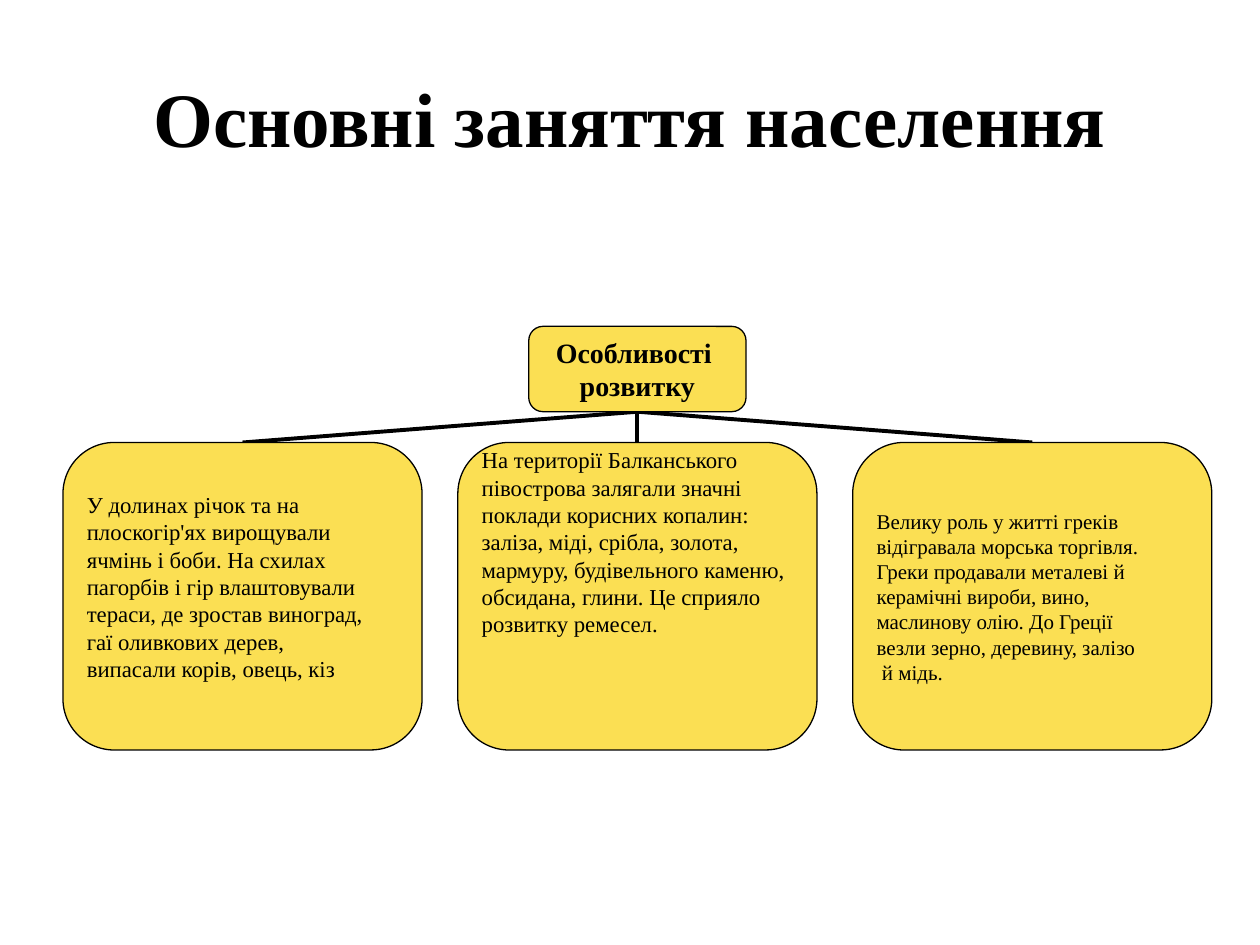
from dataclasses import dataclass

from lxml.etree import SubElement
from pptx import Presentation
from pptx.dml.color import RGBColor
from pptx.enum.shapes import MSO_CONNECTOR, MSO_SHAPE
from pptx.enum.text import MSO_ANCHOR, PP_ALIGN
from pptx.oxml.ns import qn
from pptx.util import Cm, Pt


@dataclass(frozen=True)
class Theme:
    font: str = "Times New Roman"
    ink: RGBColor = RGBColor(0x00, 0x00, 0x00)
    yellow: RGBColor = RGBColor(0xFB, 0xDF, 0x53)
    title: int = 44
    heading: int = 16
    body: int = 13
    small: int = 12


theme = Theme()


def write_lines(frame, lines, size, bold=False, align=PP_ALIGN.LEFT):
    frame.word_wrap = True
    frame.vertical_anchor = MSO_ANCHOR.MIDDLE
    for index, line in enumerate(lines):
        para = frame.paragraphs[0] if index == 0 else frame.add_paragraph()
        para.text = line
        para.alignment = align
        para.font.name = theme.font
        para.font.size = Pt(size)
        para.font.bold = bold
        para.font.color.rgb = theme.ink


def add_box(left, top, width, height, bottom_inset=0.1):
    box = page.shapes.add_shape(
        MSO_SHAPE.ROUNDED_RECTANGLE, Cm(left), Cm(top), Cm(width), Cm(height))
    box.shadow.inherit = False
    box.fill.solid()
    box.fill.fore_color.rgb = theme.yellow
    box.line.color.rgb = theme.ink
    box.line.width = Pt(0.75)
    frame = box.text_frame
    frame.margin_left = frame.margin_right = Cm(0.18)
    frame.margin_top = Cm(0.1)
    frame.margin_bottom = Cm(bottom_inset)
    return box


deck = Presentation()
deck.slide_width, deck.slide_height = Cm(25.4), Cm(19.05)
page = deck.slides.add_slide(deck.slide_layouts[6])

# Title
title = page.shapes.add_textbox(Cm(1.27), Cm(0.76), Cm(22.86), Cm(3.18))
write_lines(title.text_frame, ["Основні заняття населення"], theme.title,
            bold=True, align=PP_ALIGN.CENTER)

# Root of the tree
root = add_box(10.66, 6.58, 4.38, 1.72)
write_lines(root.text_frame, ["Особливості ", "розвитку"], theme.heading,
            bold=True, align=PP_ALIGN.CENTER)

# Branches: text size, bottom inset, lines
branches = [
    (theme.body, 0.5, [
        "У долинах річок та на",
        "плоскогір'ях вирощували",
        "ячмінь і боби. На схилах",
        "пагорбів і гір влаштовували",
        "тераси, де зростав виноград,",
        "гаї оливкових дерев,",
        "випасали корів, овець, кіз",
    ]),
    (theme.body, 2.3, [
        "На території Балканського",
        "півострова залягали значні",
        "поклади корисних копалин:",
        "заліза, міді, срібла, золота,",
        "мармуру, будівельного каменю,",
        "обсидана, глини. Це сприяло",
        "розвитку ремесел.",
    ]),
    (theme.small, 0.1, [
        "Велику роль у житті греків",
        "відігравала морська торгівля.",
        "Греки продавали металеві й",
        "керамічні вироби, вино,",
        "маслинову олію. До Греції",
        "везли зерно, деревину, залізо",
        " й мідь.",
    ]),
]
branch_left, branch_pitch = 1.27, 7.96
for column, (size, bottom_inset, lines) in enumerate(branches):
    branch = add_box(branch_left + column * branch_pitch, 8.92, 7.24, 6.2, bottom_inset)
    write_lines(branch.text_frame, lines, size)

    # Link to the root, placed behind the boxes
    link = page.shapes.add_connector(MSO_CONNECTOR.STRAIGHT, 0, 0, 0, 0)
    link.begin_connect(branch, 0)
    link.end_connect(root, 2)
    link.line.color.rgb = theme.ink
    link.line.width = Pt(2.25)
    SubElement(link._element.spPr, qn("a:effectLst"))
    page.shapes._spTree.insert(2, link._element)

deck.save("out.pptx")
